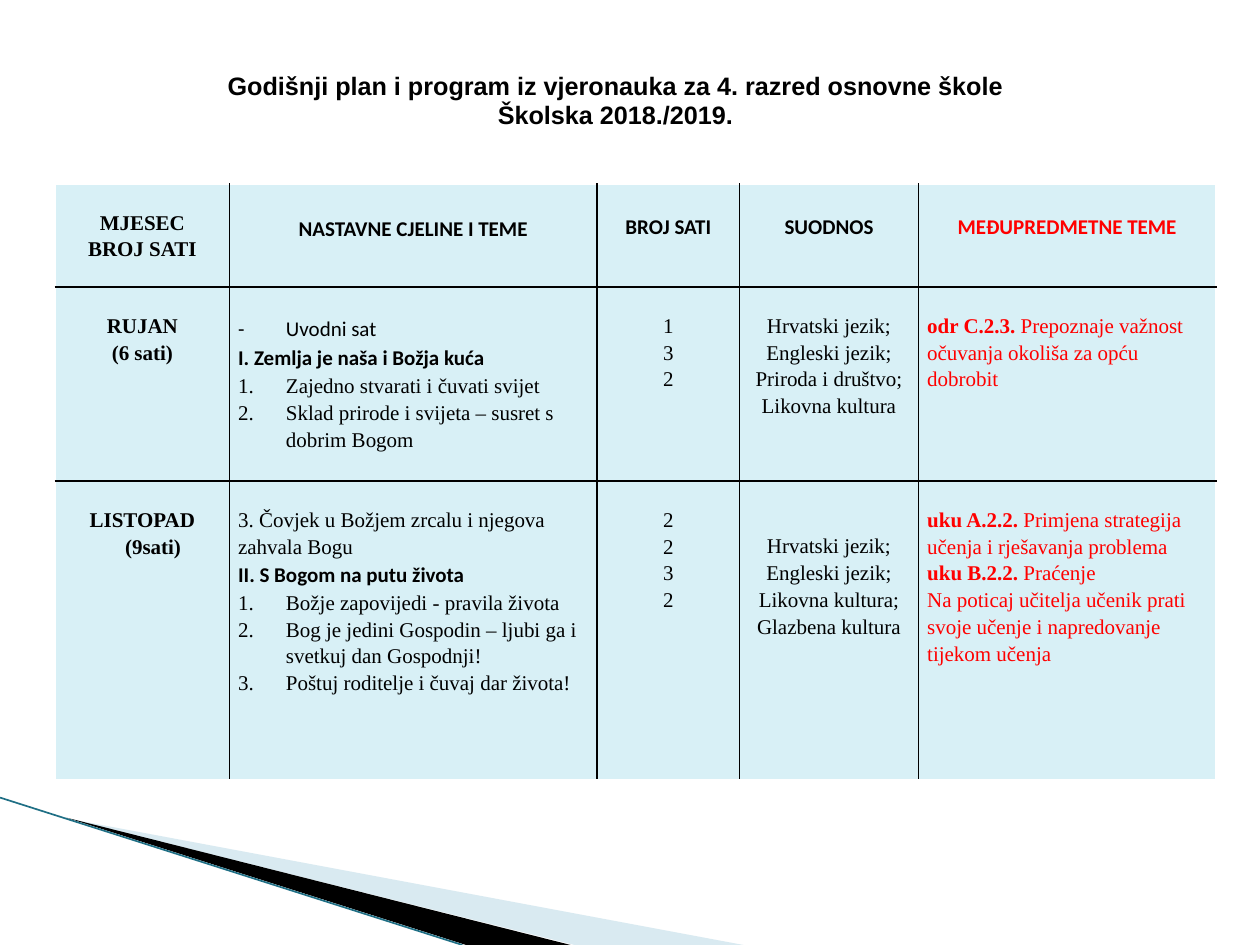
import pptx
import pptx.util
import pptx.dml.color
import pptx.enum.shapes
import pptx.enum.text
import pptx.oxml.ns
from lxml import etree

Inches, Pt = pptx.util.Inches, pptx.util.Pt
ALIGN = pptx.enum.text.PP_ALIGN
COLORS = {"black": "000000", "white": "FFFFFF", "red": "FF0000",
          "cell": "D3EEF5", "wedge": "A0CBDC", "edge": "1F6F85"}
SERIF, SANS = "Times New Roman", "Calibri"

TITLE = ("Godišnji plan i program iz vjeronauka za 4. razred osnovne škole"
         "\vŠkolska 2018./2019.")
COLUMN_WIDTHS = [1.38, 2.92, 1.13, 1.42, 2.36]
ROW_HEIGHTS = [0.82, 1.54, 2.37]
CENTERED_COLUMNS = {0, 2, 3}
RED_COLUMN = 4

# A paragraph is (kind, text) or (kind, bold lead, text); a cell is (top inset, paragraphs).
ROWS = [
    [(0.19, [("bold", "MJESEC"), ("bold", "BROJ SATI")]),
     (0.23, [("heading", "NASTAVNE CJELINE I TEME")]),
     (0.21, [("heading", "BROJ SATI")]),
     (0.21, [("heading", "SUODNOS")]),
     (0.21, [("heading", "MEĐUPREDMETNE TEME")])],
    [(0.19, [("bold", "RUJAN"), ("bold", "(6 sati)")]),
     (0.2, [("dash", "Uvodni sat"),
            ("unit", "I. Zemlja je naša i Božja kuća"),
            ("number", "Zajedno stvarati i čuvati svijet"),
            ("number", "Sklad prirode i svijeta – susret s dobrim Bogom")]),
     (0.19, [("plain", "1"), ("plain", "3"), ("plain", "2")]),
     (0.19, [("plain", "Hrvatski jezik; Engleski jezik; Priroda i društvo;"),
             ("plain", "Likovna kultura")]),
     (0.19, [("lead", "odr C.2.3.", " Prepoznaje važnost očuvanja okoliša za opću dobrobit")])],
    [(0.19, [("bold", "LISTOPAD"), ("shifted", "(9sati)")]),
     (0.19, [("plain", "3. Čovjek u Božjem zrcalu i njegova zahvala Bogu"),
             ("unit", "II. S Bogom na putu života"),
             ("number", "Božje zapovijedi - pravila života"),
             ("number", "Bog je jedini Gospodin – ljubi ga i svetkuj dan Gospodnji!"),
             ("number", "Poštuj roditelje i čuvaj dar života!")]),
     (0.19, [("plain", "2"), ("plain", "2"), ("plain", "3"), ("plain", "2")]),
     (0.4, [("plain", "Hrvatski jezik; Engleski jezik; Likovna kultura;"),
            ("plain", "Glazbena kultura")]),
     (0.19, [("lead", "uku A.2.2.", " Primjena strategija učenja i rješavanja problema"),
             ("lead", "uku B.2.2.", " Praćenje"),
             ("plain", "Na poticaj učitelja učenik prati svoje učenje i "
                       "napredovanje tijekom učenja")])],
]
WEDGES = [("wedge", 40, [(0.55, 6.5), (5.9, 7.5), (4.56, 7.5)]),
          ("black", 100, [(0.53, 6.49), (4.53, 7.5), (3.7, 7.5)])]


def rgb(name):
    return pptx.dml.color.RGBColor.from_string(COLORS[name])


def add_xml(parent, tag, **attributes):
    return etree.SubElement(parent, pptx.oxml.ns.qn(tag), **attributes)


def set_fill(fill, properties, name, opacity):
    fill.solid()
    fill.fore_color.rgb = rgb(name)
    if opacity < 100:
        paint = properties.find(pptx.oxml.ns.qn("a:solidFill"))
        add_xml(paint[0], "a:alpha", val=str(opacity * 1000))


def set_borders(properties, row, column):
    """Draw white outer edges and black inner rules."""
    outer = {"L": column == 0, "R": column == len(COLUMN_WIDTHS) - 1,
             "T": row == 0, "B": row == len(ROW_HEIGHTS) - 1}
    for side, is_outer in outer.items():
        line = add_xml(properties, f"a:ln{side}", w=str(Pt(1)))
        paint = add_xml(line, "a:solidFill")
        add_xml(paint, "a:srgbClr", val=COLORS["white" if is_outer else "black"])


def set_list_style(para, kind):
    properties = para._p.get_or_add_pPr()
    if kind == "shifted":
        properties.set("marL", str(Inches(0.17)))
    if kind not in ("dash", "number"):
        return
    properties.set("marL", str(Inches(0.38)))
    properties.set("indent", str(-Inches(0.38)))
    if kind == "dash":
        add_xml(properties, "a:buFont", typeface=SANS)
        add_xml(properties, "a:buChar", char="-")
    else:
        add_xml(properties, "a:buAutoNum", type="arabicPeriod")
    tabs = add_xml(properties, "a:tabLst")
    add_xml(tabs, "a:tab", pos=str(Inches(0.17)), algn="l")


def fill_cell(cell, row, column, top, paragraphs):
    properties = cell._tc.get_or_add_tcPr()
    set_borders(properties, row, column)
    set_fill(cell.fill, properties, "cell", 88)
    cell.margin_left = cell.margin_right = Inches(0.07)
    cell.margin_top, cell.margin_bottom = Inches(top), 0
    frame = cell.text_frame
    for index, (kind, *texts) in enumerate(paragraphs):
        para = frame.add_paragraph() if index else frame.paragraphs[0]
        set_list_style(para, kind)
        centered = kind == "heading" or column in CENTERED_COLUMNS
        para.alignment = ALIGN.CENTER if centered else ALIGN.LEFT
        para.line_spacing = 1.15
        for position, text in enumerate(texts):
            span = para.add_run()
            span.text = text
            font = span.font
            font.name = SANS if kind in ("heading", "unit", "dash") else SERIF
            font.size = Pt(12)
            font.bold = (kind in ("heading", "unit", "bold", "shifted")
                         or kind == "lead" and position == 0)
            font.color.rgb = rgb("red" if column == RED_COLUMN else "black")


def add_title(slide):
    title = slide.shapes.title
    title.left, title.top = Inches(1.3), Inches(0.4)
    title.width, title.height = Inches(7.17), Inches(0.63)
    frame = title.text_frame
    frame.text = TITLE
    frame.word_wrap = True
    frame.vertical_anchor = pptx.enum.text.MSO_ANCHOR.BOTTOM
    frame.margin_top = frame.margin_bottom = 0
    para = frame.paragraphs[0]
    para.alignment = ALIGN.CENTER
    para.line_spacing = Pt(16.8)
    for span in para.runs:
        span.font.name, span.font.size, span.font.bold = "Arial", Pt(14.4), True
        span.font.color.rgb = rgb("black")


def add_corner(slide):
    for color, opacity, corners in WEDGES:
        points = [(Inches(x), Inches(y)) for x, y in corners]
        builder = slide.shapes.build_freeform(*points[0])
        builder.add_line_segments(points[1:], close=True)
        wedge = builder.convert_to_shape()
        wedge.shadow.inherit = False
        wedge.line.fill.background()
        set_fill(wedge.fill, wedge._element.spPr, color, opacity)
    edge = slide.shapes.add_connector(
        pptx.enum.shapes.MSO_CONNECTOR.STRAIGHT,
        0, Inches(6.33), Inches(3.67), Inches(7.5))
    edge.line.color.rgb = rgb("edge")
    edge.line.width = Pt(0.95)
    add_xml(edge._element.spPr, "a:effectLst")


def add_plan(slide):
    table = slide.shapes.add_table(
        len(ROWS), len(COLUMN_WIDTHS), Inches(0.44), Inches(1.46),
        Inches(sum(COLUMN_WIDTHS)), Inches(sum(ROW_HEIGHTS))).table
    table.first_row = table.horz_banding = False
    for column, width in zip(table.columns, COLUMN_WIDTHS):
        column.width = Inches(width)
    for row, height in zip(table.rows, ROW_HEIGHTS):
        row.height = Inches(height)
    for row, cells in enumerate(ROWS):
        for column, (top, paragraphs) in enumerate(cells):
            fill_cell(table.cell(row, column), row, column, top, paragraphs)


def main():
    deck = pptx.Presentation()
    deck.slide_width, deck.slide_height = Inches(10), Inches(7.5)
    slide = deck.slides.add_slide(deck.slide_layouts[5])
    add_corner(slide)
    add_plan(slide)
    add_title(slide)
    deck.save("out.pptx")


if __name__ == "__main__":
    main()
